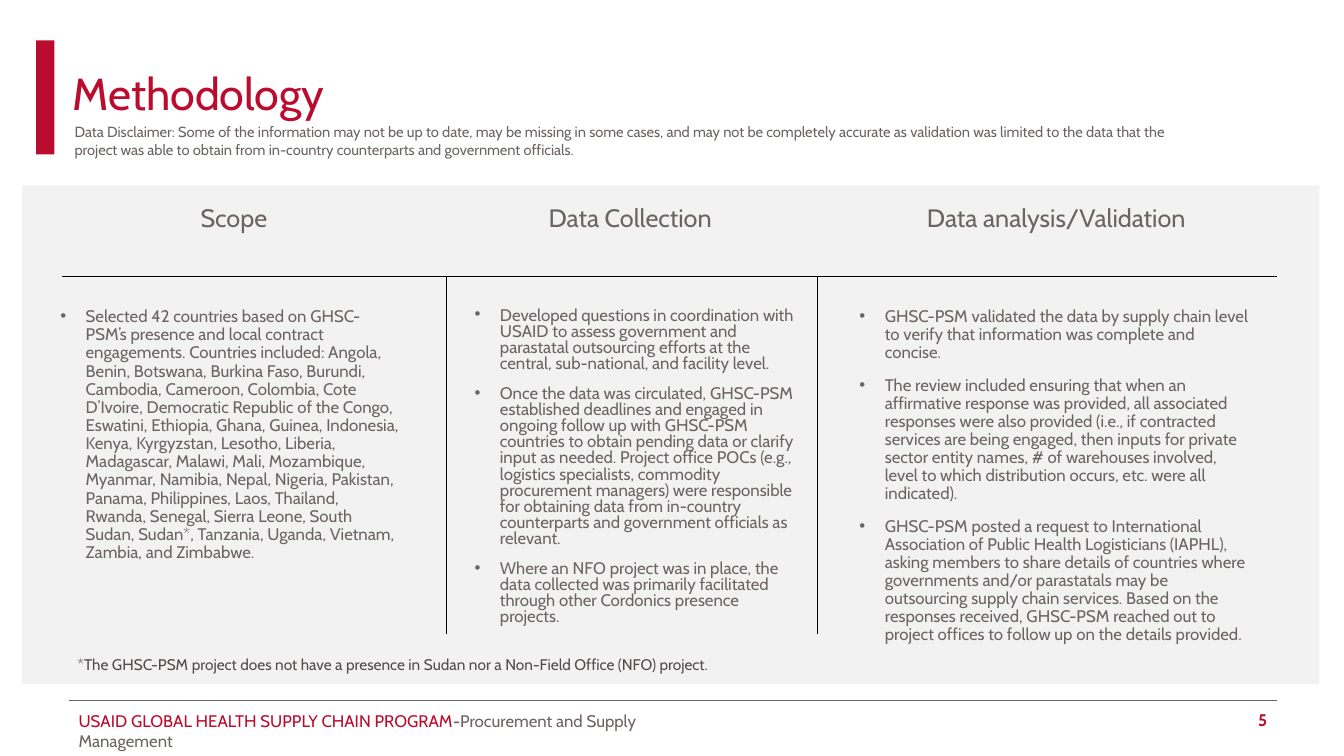
from dataclasses import dataclass

from lxml.etree import SubElement
from pptx import Presentation
from pptx.dml.color import RGBColor
from pptx.enum.shapes import MSO_CONNECTOR, MSO_SHAPE
from pptx.enum.text import MSO_ANCHOR, PP_ALIGN
from pptx.oxml.ns import qn
from pptx.util import Cm, Pt


@dataclass(frozen=True)
class Theme:
    font: str = "Cabin"
    red: str = "BA0C2F"
    grey: str = "6C6463"
    dark: str = "514B4A"
    panel: str = "F2F2F2"
    black: str = "000000"
    title: float = 32
    heading: float = 18
    body: float = 12
    note: float = 11
    disclaimer: float = 10.5
    line: float = 0.75


@dataclass(frozen=True)
class Box:
    """A rectangle in centimetres."""
    left: float
    top: float
    width: float
    height: float

    def inner(self, left, top, width, height):
        return Box(self.left + left, self.top + top, width, height)

    def lengths(self):
        return [Cm(side) for side in (self.left, self.top, self.width, self.height)]


@dataclass(frozen=True)
class Column:
    heading: str
    heading_left: float
    heading_width: float
    body_left: float
    body_width: float
    spacing: float
    points: tuple


THEME = Theme()
BULLET_INDENT = Cm(0.64)

COLUMNS = (
    Column("Scope", 1.88, 6.91, 0.71, 9.09, 0.9, (
        "Selected 42 countries based on GHSC-PSM’s presence and local contract engagements. "
        "Countries included: Angola, Benin, Botswana, Burkina Faso, Burundi, Cambodia, Cameroon, "
        "Colombia, Cote D’Ivoire, Democratic Republic of the Congo, Eswatini, Ethiopia, Ghana, "
        "Guinea, Indonesia, Kenya, Kyrgyzstan, Lesotho, Liberia, Madagascar, Malawi, Mali, "
        "Mozambique, Myanmar, Namibia, Nepal, Nigeria, Pakistan, Panama, Philippines, Laos, "
        "Thailand, Rwanda, Senegal, Sierra Leone, South Sudan, Sudan*, Tanzania, Uganda, "
        "Vietnam, Zambia, and Zimbabwe.",
    )),
    Column("Data Collection", 12.88, 4.88, 11.15, 8.66, 0.8, (
        "Developed questions in coordination with USAID to assess government and parastatal "
        "outsourcing efforts at the central, sub-national, and facility level.",
        "Once the data was circulated, GHSC-PSM established deadlines and engaged in ongoing "
        "follow up with GHSC-PSM countries to obtain pending data or clarify input as needed. "
        "Project office POCs (e.g., logistics specialists, commodity procurement managers) were "
        "responsible for obtaining data from in-country counterparts and government officials "
        "as relevant.",
        "Where an NFO project was in place, the data collected was primarily facilitated "
        "through other Cordonics presence projects.",
    )),
    Column("Data analysis/Validation", 22.2, 7.72, 20.85, 10.36, 0.9, (
        "GHSC-PSM validated the data by supply chain level to verify that information was "
        "complete and concise.",
        "The review included ensuring that when an affirmative response was provided, all "
        "associated responses were also provided (i.e., if contracted services are being "
        "engaged, then inputs for private sector entity names, # of warehouses involved, level "
        "to which distribution occurs, etc. were all indicated).",
        "GHSC-PSM posted a request to International Association of Public Health Logisticians "
        "(IAPHL), asking members to share details of countries where governments and/or "
        "parastatals may be outsourcing supply chain services. Based on the responses received, "
        "GHSC-PSM reached out to project offices to follow up on the details provided.",
    )),
)


def style(font, size, color, bold=None):
    font.name = THEME.font
    font.size = Pt(size)
    font.color.rgb = RGBColor.from_string(color)
    font.bold = bold


def add_frame(page, box, anchor=MSO_ANCHOR.TOP):
    frame = page.shapes.add_textbox(*box.lengths()).text_frame
    frame.word_wrap = True
    frame.vertical_anchor = anchor
    return frame


def add_text(page, box, text, size, color, align=PP_ALIGN.LEFT, anchor=MSO_ANCHOR.TOP, bold=None):
    para = add_frame(page, box, anchor).paragraphs[0]
    para.text = text
    para.alignment = align
    style(para.font, size, color, bold)
    return para


def add_bullets(page, box, points, spacing):
    frame = add_frame(page, box)
    for index, point in enumerate(points):
        para = frame.paragraphs[0] if index == 0 else frame.add_paragraph()
        para.text = point
        para.line_spacing = spacing
        if index:
            para.space_before = Pt(10)
        properties = para._p.get_or_add_pPr()
        properties.set("marL", str(BULLET_INDENT))
        properties.set("indent", str(-BULLET_INDENT))
        SubElement(properties, qn("a:buFont"), typeface="Arial")
        SubElement(properties, qn("a:buChar"), char="•")
        style(para.font, THEME.body, THEME.grey)


def add_rectangle(page, box, color):
    shape = page.shapes.add_shape(MSO_SHAPE.RECTANGLE, *box.lengths())
    shape.shadow.inherit = False
    shape.fill.solid()
    shape.fill.fore_color.rgb = RGBColor.from_string(color)
    shape.line.fill.background()


def add_line(page, box, color):
    """Draw a line from the box's top left to its bottom right."""
    left, top, width, height = box.lengths()
    line = page.shapes.add_connector(
        MSO_CONNECTOR.STRAIGHT, left, top, left + width, top + height)
    line.line.color.rgb = RGBColor.from_string(color)
    line.line.width = Pt(THEME.line)
    SubElement(line._element.spPr, qn("a:effectLst"))


def add_header(page, box):
    add_rectangle(page, box.inner(0, 0, 0.46, 2.87), THEME.red)
    title = add_text(page, box.inner(0.66, -0.03, 30.45, 2.87), "Methodology",
                     THEME.title, THEME.red, anchor=MSO_ANCHOR.MIDDLE)
    title.line_spacing = 0.9
    add_text(page, box.inner(0.72, 1.95, 28.27, 1.14),
             "Data Disclaimer: Some of the information may not be up to date, may be missing in "
             "some cases, and may not be completely accurate as validation was limited to the "
             "data that the project was able to obtain from in-country counterparts and "
             "government officials.", THEME.disclaimer, THEME.grey)


def add_panel(page, box):
    add_rectangle(page, box, THEME.panel)
    for column in COLUMNS:
        add_text(page, box.inner(column.heading_left, 0.31, column.heading_width, 1.02),
                 column.heading, THEME.heading, THEME.grey, PP_ALIGN.CENTER)
        add_bullets(page, box.inner(column.body_left, 2.97, column.body_width, 8.3),
                    column.points, column.spacing)
    add_line(page, box.inner(1.01, 2.29, 30.61, 0), THEME.black)
    for divider_left in (10.69, 20.04):
        add_line(page, box.inner(divider_left, 2.29, 0, 9.02), THEME.black)
    add_text(page, box.inner(1.14, 11.71, 30.48, 0.74),
             "*The GHSC-PSM project does not have a presence in Sudan nor a Non-Field Office "
             "(NFO) project.", THEME.note, THEME.dark)


def add_footer(page, box):
    add_line(page, box.inner(0, 0, box.width, 0), THEME.grey)
    para = add_frame(page, box.inner(0, 0.13, 16.87, 1.27)).paragraphs[0]
    for text, color, bold in (
        ("USAID GLOBAL HEALTH SUPPLY CHAIN PROGRAM", THEME.red, False),
        ("-", THEME.grey, True),
        ("Procurement and Supply Management", THEME.grey, False),
    ):
        span = para.add_run()
        span.text = text
        style(span.font, THEME.body, color, bold)
    add_text(page, box.inner(box.width - 2.57, 0.1, 2.57, 0.79), "5",
             THEME.body, THEME.red, PP_ALIGN.RIGHT, MSO_ANCHOR.MIDDLE, True)


def main():
    deck = Presentation()
    deck.slide_width, deck.slide_height = Cm(33.87), Cm(19.05)
    page = deck.slides.add_slide(deck.slide_layouts[6])
    add_footer(page, Box(1.73, 17.65, 30.45, 1.4))
    add_header(page, Box(0.91, 1.02, 31.11, 3.09))
    add_panel(page, Box(0.56, 4.67, 32.69, 12.57))
    deck.save("out.pptx")


if __name__ == "__main__":
    main()
